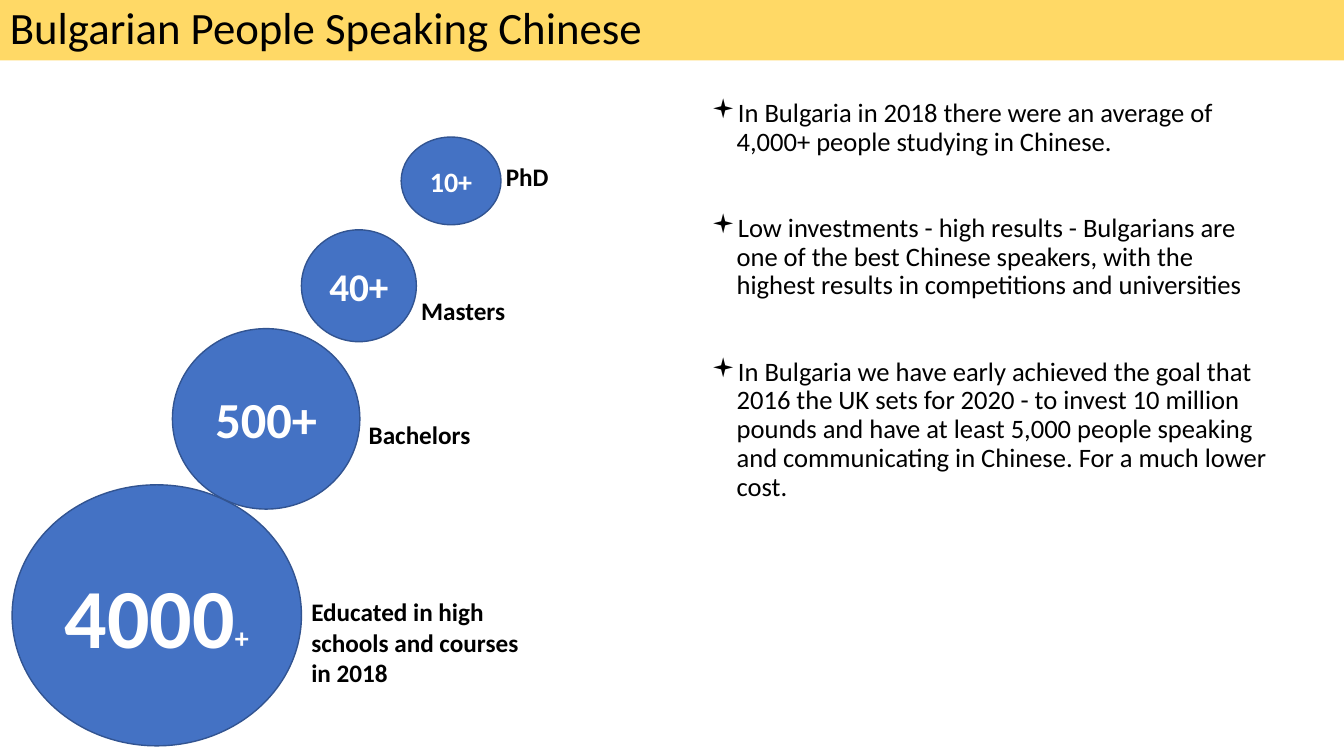
from dataclasses import dataclass

from lxml import etree
from pptx import Presentation
from pptx.dml.color import RGBColor
from pptx.enum.shapes import MSO_SHAPE
from pptx.enum.text import MSO_ANCHOR, PP_ALIGN
from pptx.oxml.ns import qn
from pptx.util import Inches, Pt

RECTANGLE, OVAL = MSO_SHAPE.RECTANGLE, MSO_SHAPE.OVAL
TOP, MIDDLE = MSO_ANCHOR.TOP, MSO_ANCHOR.MIDDLE
LEFT, CENTER = PP_ALIGN.LEFT, PP_ALIGN.CENTER

SLIDE_WIDTH, SLIDE_HEIGHT = Inches(13.333), Inches(7.5)
FONT = "Calibri"
BLACK, WHITE = "000000", "FFFFFF"
BLUE, DARK_BLUE, YELLOW = "4472C4", "325491", "FFD966"
LABEL_SIZE, BULLET_SIZE, TITLE_SIZE, PLUS_SIZE = 18, 19, 32, 20
BULLET_INDENT = Inches(0.25)


@dataclass(frozen=True)
class Area:
    """Left, top, width and height in percent of the slide."""
    left: float
    top: float
    width: float
    height: float

    def box(self) -> tuple[int, int, int, int]:
        return (int(SLIDE_WIDTH * self.left / 100), int(SLIDE_HEIGHT * self.top / 100),
                int(SLIDE_WIDTH * self.width / 100), int(SLIDE_HEIGHT * self.height / 100))


@dataclass(frozen=True)
class Level:
    count: str
    count_size: int
    circle: Area
    label: str
    label_area: Area
    plus_size: int = 0


LEVELS = [
    Level("10", 20, Area(29.85, 18.13, 7.43, 11.6),
          "PhD", Area(36.9, 20.67, 13.43, 5.33)),
    Level("40", 28, Area(22.43, 30.4, 8.55, 14.8),
          "Masters", Area(30.6, 38.4, 13.43, 5.33)),
    Level("500", 36, Area(12.83, 43.47, 13.95, 23.87),
          "Bachelors", Area(26.7, 54.8, 13.43, 5.33)),
    Level("4000", 60, Area(0.9, 64.13, 21.53, 34.53),
          "Educated in high schools and courses in 2018",
          Area(22.43, 78.27, 17.25, 13.47), PLUS_SIZE),
]

FINDINGS = [
    "In Bulgaria in 2018 there were an average of 4,000+ people studying in Chinese.",
    "Low investments - high results - Bulgarians are one of the best Chinese speakers, "
    "with the highest results in competitions and universities",
    "In Bulgaria we have early achieved the goal that 2016 the UK sets for 2020 - "
    "to invest 10 million pounds and have at least 5,000 people speaking and "
    "communicating in Chinese. For a much lower cost.",
]


def color(hex_code: str) -> RGBColor:
    return RGBColor.from_string(hex_code)


def format_run(run, size: int, hex_code: str, bold: bool = False) -> None:
    run.font.name = FONT
    run.font.size = Pt(size)
    run.font.bold = bold
    run.font.color.rgb = color(hex_code)


def add_filled(slide, preset, area: Area, fill: str, line: str = ""):
    shape = slide.shapes.add_shape(preset, *area.box())
    shape.shadow.inherit = False
    shape.fill.solid()
    shape.fill.fore_color.rgb = color(fill)
    if line:
        shape.line.color.rgb = color(line)
        shape.line.width = Pt(1)
    else:
        shape.line.fill.background()
    shape.text_frame.word_wrap = True
    shape.text_frame.vertical_anchor = MIDDLE
    return shape


def add_text_area(slide, area: Area):
    frame = slide.shapes.add_textbox(*area.box()).text_frame
    frame.word_wrap = True
    frame.vertical_anchor = TOP
    return frame


def add_square_bullet(paragraph) -> None:
    properties = paragraph._p.get_or_add_pPr()
    properties.set("marL", str(BULLET_INDENT))
    properties.set("indent", str(-BULLET_INDENT))
    etree.SubElement(properties, qn("a:buFont")).set("typeface", "Wingdings")
    etree.SubElement(properties, qn("a:buChar")).set("char", "▪")


def add_level(slide, level: Level) -> None:
    circle = add_filled(slide, OVAL, level.circle, BLUE, DARK_BLUE)
    count = circle.text_frame.paragraphs[0]
    count.text = level.count if level.plus_size else level.count + "+"
    count.alignment = CENTER
    format_run(count.runs[0], level.count_size, WHITE, bold=True)
    if level.plus_size:
        plus = count.add_run()
        plus.text = "+"
        format_run(plus, level.plus_size, WHITE, bold=True)

    label = add_text_area(slide, level.label_area)
    label.text = level.label
    format_run(label.paragraphs[0].runs[0], LABEL_SIZE, BLACK, bold=True)


def add_findings(slide, findings: list[str], area: Area) -> None:
    frame = add_text_area(slide, area)
    for index, finding in enumerate(findings):
        paragraph = frame.add_paragraph() if index else frame.paragraphs[0]
        paragraph.text = finding
        paragraph.line_spacing = 0.9
        paragraph.space_before = Pt(41 if index else 0)
        add_square_bullet(paragraph)
        format_run(paragraph.runs[0], BULLET_SIZE, BLACK)


def add_title(slide, title: str, area: Area) -> None:
    band = add_filled(slide, RECTANGLE, area, YELLOW)
    heading = band.text_frame.paragraphs[0]
    heading.text = title
    heading.alignment = LEFT
    heading.line_spacing = 0.9
    format_run(heading.runs[0], TITLE_SIZE, BLACK)


def main() -> None:
    deck = Presentation()
    deck.slide_width, deck.slide_height = SLIDE_WIDTH, SLIDE_HEIGHT
    slide = deck.slides.add_slide(deck.slide_layouts[6])

    # Findings on the right
    add_findings(slide, FINDINGS, Area(52.2, 12.53, 43.5, 83.47))

    # Circles rising from schools to PhD
    for level in LEVELS:
        add_level(slide, level)

    # Title band
    add_title(slide, "Bulgarian People Speaking Chinese", Area(0, 0, 100, 8))

    deck.save("out.pptx")


if __name__ == "__main__":
    main()
